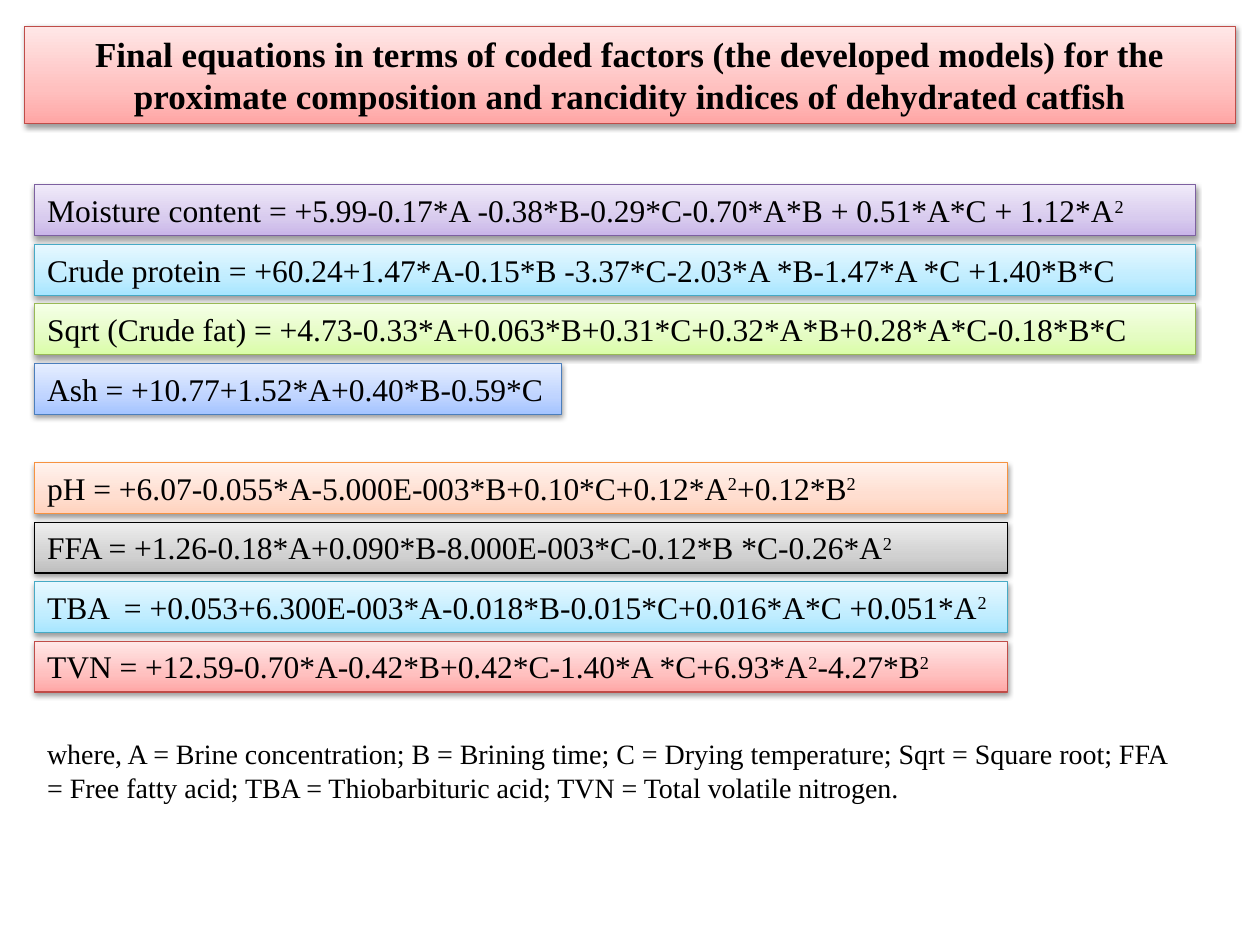
import copy

import lxml.etree
import pptx
import pptx.dml.color
import pptx.enum.shapes
import pptx.enum.text
import pptx.oxml.ns
import pptx.util

Pt = pptx.util.Pt
RGB = pptx.dml.color.RGBColor
qn = pptx.oxml.ns.qn
ALIGN = pptx.enum.text.PP_ALIGN

FONT = "Times New Roman"
BLACK = RGB(0x00, 0x00, 0x00)

# Each theme: line colour, then the gradient from bottom to top
RED = (RGB(0xBF, 0x4C, 0x48), RGB(0xFF, 0xA6, 0xA5), RGB(0xFF, 0xC0, 0xBF), RGB(0xFF, 0xE7, 0xE7))
PURPLE = (RGB(0x7D, 0x60, 0xA0), RGB(0xC9, 0xB5, 0xE8), RGB(0xD8, 0xCB, 0xEE), RGB(0xF0, 0xEA, 0xF9))
AQUA = (RGB(0x46, 0xAA, 0xC5), RGB(0xA7, 0xE6, 0xFF), RGB(0xC1, 0xED, 0xFF), RGB(0xE7, 0xF8, 0xFF))
GREEN = (RGB(0x98, 0xB9, 0x55), RGB(0xDA, 0xFD, 0xA7), RGB(0xE4, 0xFC, 0xC2), RGB(0xF5, 0xFF, 0xE7))
BLUE = (RGB(0x4B, 0x7E, 0xBC), RGB(0xA4, 0xC4, 0xFF), RGB(0xBF, 0xD4, 0xFF), RGB(0xE6, 0xEE, 0xFF))
ORANGE = (RGB(0xF6, 0x92, 0x40), RGB(0xFF, 0xD2, 0xBD), RGB(0xFF, 0xDE, 0xD0), RGB(0xFF, 0xF2, 0xED))
GRAY = (BLACK, RGB(0xBD, 0xBD, 0xBD), RGB(0xD1, 0xD1, 0xD1), RGB(0xEE, 0xEE, 0xEE))
STOP_POSITIONS = (0, 0.35, 1)

LEFT = 19.8
WIDE, MEDIUM, NARROW = 663.4, 555.8, 301
BAR_HEIGHT, BAR_PITCH = 29.1, 34

COMPOSITION = [
    ("Moisture content = +5.99-0.17*A -0.38*B-0.29*C-0.70*A*B + 0.51*A*C + 1.12*A^2", PURPLE, WIDE),
    ("Crude protein = +60.24+1.47*A-0.15*B -3.37*C-2.03*A *B-1.47*A *C +1.40*B*C", AQUA, WIDE),
    ("Sqrt (Crude fat) = +4.73-0.33*A+0.063*B+0.31*C+0.32*A*B+0.28*A*C-0.18*B*C", GREEN, WIDE),
    ("Ash = +10.77+1.52*A+0.40*B-0.59*C", BLUE, NARROW),
]
RANCIDITY = [
    ("pH = +6.07-0.055*A-5.000E-003*B+0.10*C+0.12*A^2+0.12*B^2", ORANGE, MEDIUM),
    ("FFA = +1.26-0.18*A+0.090*B-8.000E-003*C-0.12*B *C-0.26*A^2", GRAY, MEDIUM),
    ("TBA  = +0.053+6.300E-003*A-0.018*B-0.015*C+0.016*A*C +0.051*A^2", AQUA, MEDIUM),
    ("TVN = +12.59-0.70*A-0.42*B+0.42*C-1.40*A *C+6.93*A^2-4.27*B^2", RED, MEDIUM),
]


def write_text(shape, text, size=18, bold=False, align=ALIGN.LEFT, wrap=True):
    """Fill the shape with one paragraph; every ^2 becomes a superscript 2."""
    frame = shape.text_frame
    frame.word_wrap = wrap
    frame.auto_size = pptx.enum.text.MSO_AUTO_SIZE.SHAPE_TO_FIT_TEXT
    frame.vertical_anchor = pptx.enum.text.MSO_ANCHOR.TOP
    paragraph = frame.paragraphs[0]
    paragraph.alignment = align
    for part in text.replace("^2", "|^2|").split("|"):
        if not part:
            continue
        run = paragraph.add_run()
        run.text = part.lstrip("^")
        font = run.font
        font.name, font.size, font.bold = FONT, Pt(size), bold
        font.color.rgb = BLACK
        if part.startswith("^"):
            font._element.set("baseline", "30000")


def add_shadow(shape):
    shape.shadow.inherit = False
    effects = shape._element.spPr.find(qn("a:effectLst"))
    shadow = lxml.etree.SubElement(
        effects, qn("a:outerShdw"), blurRad=str(Pt(3.1)), dist=str(Pt(1.6)),
        dir="5400000", rotWithShape="0")
    color = lxml.etree.SubElement(shadow, qn("a:srgbClr"), val="000000")
    lxml.etree.SubElement(color, qn("a:alpha"), val="38000")


def add_panel(slide, box, theme, text, **text_format):
    panel = slide.shapes.add_shape(
        pptx.enum.shapes.MSO_SHAPE.RECTANGLE, *map(Pt, box))
    line_color, *stop_colors = theme
    panel.fill.gradient()
    panel.fill.gradient_angle = 90
    stop_list = panel._element.spPr.find(".//" + qn("a:gsLst"))
    stop_list.append(copy.deepcopy(stop_list[0]))
    for stop, position, color in zip(panel.fill.gradient_stops, STOP_POSITIONS, stop_colors):
        stop.position = position
        stop.color.rgb = color
    panel.line.color.rgb = line_color
    panel.line.width = Pt(0.75)
    add_shadow(panel)
    write_text(panel, text, **text_format)


def add_equations(slide, left, top, equations):
    for row, (equation, theme, width) in enumerate(equations):
        box = (left, top + row * BAR_PITCH, width, BAR_HEIGHT)
        add_panel(slide, box, theme, equation, wrap=width != NARROW)


def add_legend(slide, box):
    legend = slide.shapes.add_textbox(*map(Pt, box))
    write_text(
        legend,
        "where, A = Brine concentration; B = Brining time; C = Drying temperature; "
        "Sqrt = Square root; FFA = Free fatty acid; TBA = Thiobarbituric acid; "
        "TVN = Total volatile nitrogen.",
        size=16)


def main():
    deck = pptx.Presentation()
    deck.slide_width, deck.slide_height = Pt(720), Pt(540)
    slide = deck.slides.add_slide(deck.slide_layouts[6])
    add_panel(
        slide, (14, 15, 692, 55.7), RED,
        "Final equations in terms of coded factors (the developed models) for the "
        "proximate composition and rancidity indices of dehydrated catfish",
        size=20, bold=True, align=ALIGN.CENTER)
    add_equations(slide, LEFT, 105.6, COMPOSITION)
    add_equations(slide, LEFT, 264.4, RANCIDITY)
    add_legend(slide, (LEFT, 417.6, WIDE, 46))
    deck.save("out.pptx")


if __name__ == "__main__":
    main()
